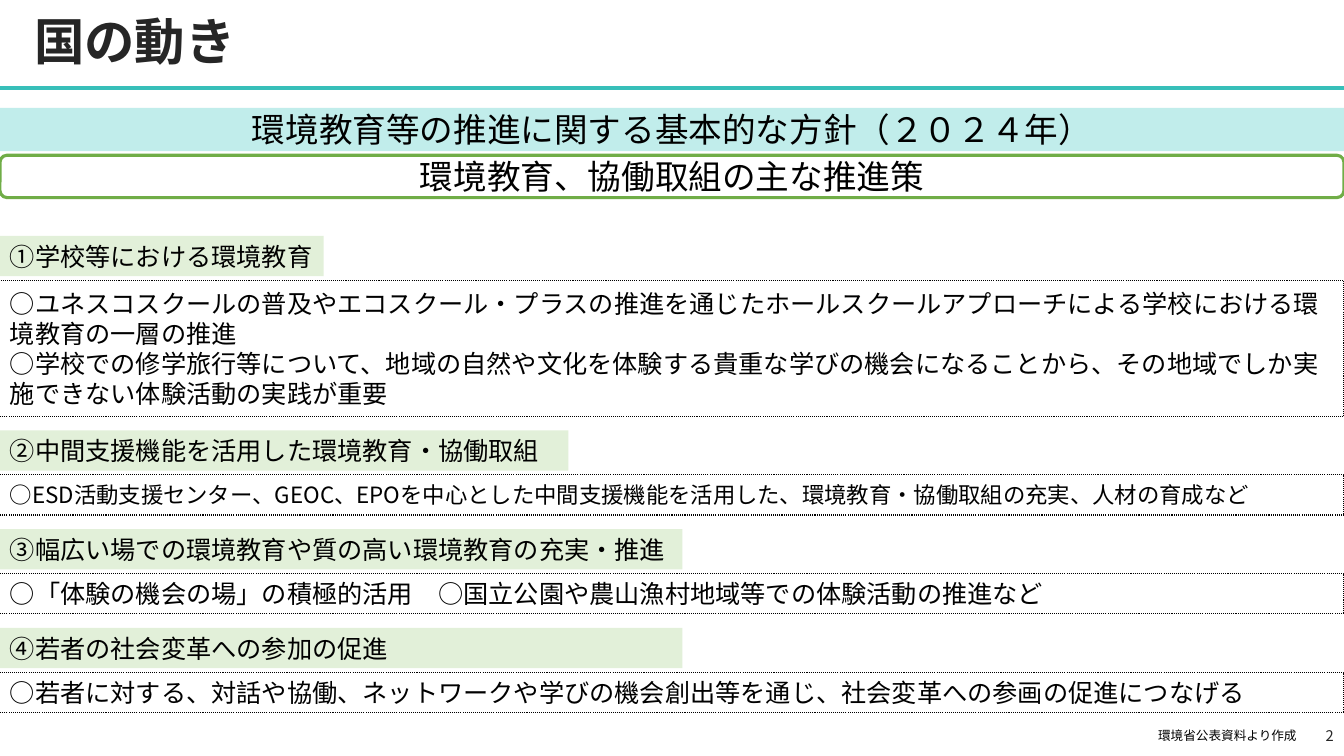
"""Build the slide on national environmental education policy."""
from pptx import Presentation
from pptx.dml.color import RGBColor
from pptx.enum.dml import MSO_LINE
from pptx.enum.shapes import MSO_CONNECTOR, MSO_SHAPE
from pptx.enum.text import MSO_ANCHOR as Anchor, PP_ALIGN as Align
from pptx.oxml.ns import qn
from pptx.util import Inches, Pt

CELL = Inches(0.1)
COLUMNS, ROWS = 133.33, 75
FONT = "Noto Sans CJK JP"

BLACK = RGBColor(0x00, 0x00, 0x00)
CHARCOAL = RGBColor(0x26, 0x26, 0x26)
TEAL = RGBColor(0x37, 0xBF, 0xB9)
PALE_TEAL = RGBColor(0xC1, 0xED, 0xEB)
GREEN = RGBColor(0x70, 0xAD, 0x47)
PALE_GREEN = RGBColor(0xE2, 0xF0, 0xD9)

SECTION_TOP, BAR_ROWS, BODY_OFFSET, SECTION_GAP = 23.4, 4, 4.4, 1.4
SECTIONS = [
    ("①学校等における環境教育", 32.1, 13.5, 18, Pt(21.5), [
        "○ユネスコスクールの普及やエコスクール・プラスの推進を通じたホールスクールアプローチによる学校における環境教育の一層の推進",
        "○学校での修学旅行等について、地域の自然や文化を体験する貴重な学びの機会になることから、その地域でしか実施できない体験活動の実践が重要",
    ]),
    ("②中間支援機能を活用した環境教育・協働取組", 56.4, 4, 16, None, [
        "○ESD活動支援センター、GEOC、EPOを中心とした中間支援機能を活用した、環境教育・協働取組の充実、人材の育成など",
    ]),
    ("③幅広い場での環境教育や質の高い環境教育の充実・推進", 67.7, 4, 18, None, [
        "○「体験の機会の場」の積極的活用　○国立公園や農山漁村地域等での体験活動の推進など",
    ]),
    ("④若者の社会変革への参加の促進", 67.7, 4, 18, None, [
        "○若者に対する、対話や協働、ネットワークや学びの機会創出等を通じ、社会変革への参画の促進につなげる",
    ]),
]


def grid(*cells):
    """Turn grid counts into slide lengths."""
    return [round(count * CELL) for count in cells]


def apply(target, values):
    """Set every attribute named in a dict."""
    for name, value in values.items():
        setattr(target, name, value)


def write(box, lines, size, align=Align.LEFT, anchor=Anchor.MIDDLE,
          color=BLACK, bold=False, spacing=None):
    """Fill a box with one formatted paragraph per line."""
    frame = box.text_frame
    apply(frame, {"word_wrap": True, "vertical_anchor": anchor})
    for index, line in enumerate(lines):
        para = frame.add_paragraph() if index else frame.paragraphs[0]
        apply(para, {"alignment": align, "line_spacing": spacing})
        span = para.add_run()
        span.text = line
        apply(span.font, {"name": FONT, "size": Pt(size), "bold": bold})
        span.font.color.rgb = color
        east_asian = span.font._element.makeelement(qn("a:ea"), {"typeface": FONT})
        span.font._element.find(qn("a:latin")).addnext(east_asian)


def add_text(page, area, line, size, **style):
    """Add a plain text box."""
    write(page.shapes.add_textbox(*grid(*area)), [line], size, **style)


def add_panel(page, area, lines, size, fill=None, line=None,
              kind=MSO_SHAPE.RECTANGLE, **style):
    """Add a panel with an optional fill and outline."""
    panel = page.shapes.add_shape(kind, *grid(*area))
    panel.shadow.inherit = False
    if fill is None:
        panel.fill.background()
    else:
        panel.fill.solid()
        panel.fill.fore_color.rgb = fill
    if line is None:
        panel.line.fill.background()
    else:
        color, width, dash = line
        panel.line.color.rgb = color
        apply(panel.line, {"width": Pt(width), "dash_style": dash})
    write(panel, lines, size, **style)


def add_rule(page, row):
    """Draw the full-width line under the title."""
    rule = page.shapes.add_connector(MSO_CONNECTOR.STRAIGHT, *grid(0, row, COLUMNS, row))
    rule.line.color.rgb = TEAL
    rule.line.width = Pt(3)
    properties = rule._element.spPr
    properties.append(properties.makeelement(qn("a:effectLst"), {}))


def add_sections(page):
    """Stack each heading bar above its dotted body box."""
    top = SECTION_TOP
    for heading, columns, rows, size, spacing, lines in SECTIONS:
        add_panel(page, (0, top, columns, BAR_ROWS), [heading], 18, fill=PALE_GREEN)
        top += BODY_OFFSET
        add_panel(page, (0, top, COLUMNS, rows), lines, size,
                  line=(BLACK, 0.75, MSO_LINE.ROUND_DOT), spacing=spacing)
        top += rows + SECTION_GAP


def main():
    """Assemble and save the deck."""
    deck = Presentation()
    width, height = grid(COLUMNS, ROWS)
    apply(deck, {"slide_width": width, "slide_height": height})
    page = deck.slides.add_slide(deck.slide_layouts[6])
    add_rule(page, 8.7)
    add_text(page, (2.4, 0, 128.3, 8.7), "国の動き", 36,
             color=CHARCOAL, bold=True, spacing=0.9)
    add_panel(page, (0, 10.7, COLUMNS, 4.3), ["環境教育等の推進に関する基本的な方針（２０２４年）"], 24,
              fill=PALE_TEAL, align=Align.CENTER)
    add_panel(page, (0, 15.4, COLUMNS, 4.2), ["環境教育、協働取組の主な推進策"], 24,
              line=(GREEN, 2.25, MSO_LINE.SOLID), kind=MSO_SHAPE.ROUNDED_RECTANGLE,
              align=Align.CENTER)
    add_sections(page)
    add_text(page, (83.6, 71.7, 46, 2.5), "環境省公表資料より作成", 9,
             align=Align.RIGHT, anchor=Anchor.TOP)
    add_text(page, (103.3, 71, 30, 4), "2", 10.5, align=Align.RIGHT, color=CHARCOAL)
    deck.save("out.pptx")


if __name__ == "__main__":
    main()
